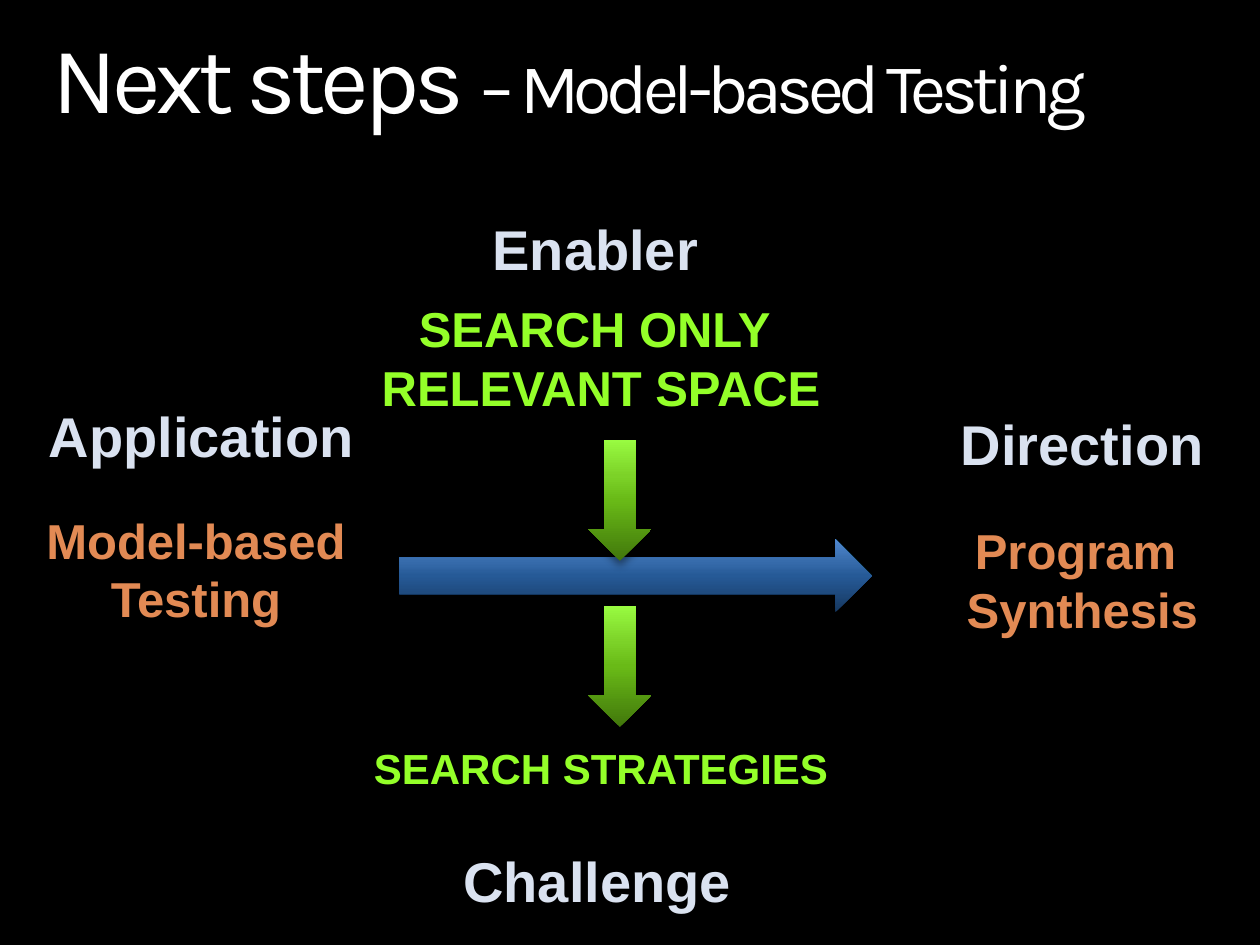
import lxml.etree
import pptx
import pptx.dml.color
import pptx.enum.shapes
import pptx.enum.text
import pptx.oxml.ns
import pptx.util

COLOURS = {
    "backdrop": "000000", "title": "FFFFFF", "heading": "DAE2F0",
    "search": "94FF29", "topic": "E28A54", "shadow": "000000",
}
GRADIENTS = {
    "blue": {0: "163860", 50: "265A97", 70: "376CAC", 100: "5188D0"},
    "green": {0: "41770B", 50: "69BA17", 70: "7CD228", 100: "99FB41"},
}
LABELS = [
    ("heading", 32, (3.8, 1.65, 1.85, 0.64), ["Enabler"]),
    ("search", 28, (2.91, 2.32, 3.72, 1.04), ["SEARCH ONLY ", "RELEVANT SPACE"]),
    ("heading", 32, (0.28, 3.14, 2.64, 0.64), ["Application"]),
    ("topic", 28, (0.25, 4, 2.61, 1.04), ["Model-based", "Testing"]),
    ("heading", 32, (7.52, 3.2, 2.14, 0.64), ["Direction"]),
    ("topic", 28, (7.56, 4.08, 2.06, 1.04), ["Program ", "Synthesis"]),
    ("search", 24, (2.85, 5.84, 3.84, 0.5), ["SEARCH STRATEGIES"]),
    ("heading", 32, (3.57, 6.67, 2.34, 0.64), ["Challenge"]),
]
ARROWS = [
    ("RIGHT_ARROW", "blue", (3.17, 4.28, 3.75, 0.58)),
    ("DOWN_ARROW", "green", (4.67, 3.49, 0.5, 0.96)),
    ("DOWN_ARROW", "green", (4.67, 4.81, 0.5, 0.96)),
]


def colour(name):
    """Return the named colour."""
    return pptx.dml.color.RGBColor.from_string(COLOURS[name])


def apply(target, values):
    """Set each attribute in a dict of format values."""
    for name, value in values.items():
        setattr(target, name, value)


def inches(box):
    """Turn a box in inches into lengths."""
    return [pptx.util.Inches(length) for length in box]


def add_child(parent, tag, **attributes):
    """Append a drawing element with the given attributes."""
    child = lxml.etree.SubElement(parent, pptx.oxml.ns.qn(tag))
    for name, value in attributes.items():
        child.set(name, str(value))
    return child


def fill_title(page, box):
    """Place the two-size title in the title placeholder."""
    title = page.shapes.title
    apply(title, dict(zip(("left", "top", "width", "height"), inches(box))))
    frame = title.text_frame
    apply(frame, {
        "margin_left": 0, "margin_top": 0, "margin_right": 0, "margin_bottom": 0,
        "word_wrap": True, "vertical_anchor": pptx.enum.text.MSO_ANCHOR.TOP,
        "auto_size": pptx.enum.text.MSO_AUTO_SIZE.SHAPE_TO_FIT_TEXT,
    })
    para = frame.paragraphs[0]
    apply(para, {"alignment": pptx.enum.text.PP_ALIGN.LEFT, "line_spacing": 0.9})
    for text, size in (("Next steps ", 54), ("– Model-based Testing", 40)):
        span = para.add_run()
        span.text = text
        apply(span.font, {"name": "Karla", "size": pptx.util.Pt(size)})
        span.font.color.rgb = colour("title")
        span.font._element.set("spc", "-300")


def add_arrow(page, preset, gradient, box):
    """Draw a block arrow with a gradient and a soft shadow."""
    kind = getattr(pptx.enum.shapes.MSO_SHAPE, preset)
    arrow = page.shapes.add_shape(kind, *inches(box))
    arrow.line.fill.background()
    arrow.fill.gradient()
    arrow.fill.gradient_angle = 90
    arrow.shadow.inherit = False
    properties = arrow._element.spPr
    stops = properties.find(".//" + pptx.oxml.ns.qn("a:gsLst"))
    for stop in list(stops):
        stops.remove(stop)
    for share, value in GRADIENTS[gradient].items():
        stop = add_child(stops, "a:gs", pos=share * 1000)
        add_child(stop, "a:srgbClr", val=value)
    effects = properties.find(pptx.oxml.ns.qn("a:effectLst"))
    shadow = add_child(
        effects, "a:outerShdw", blurRad=pptx.util.Pt(5), dist=pptx.util.Pt(3),
        dir=5400000, rotWithShape=0)
    tint = add_child(shadow, "a:srgbClr", val=COLOURS["shadow"])
    add_child(tint, "a:alpha", val=45000)


def add_label(page, role, size, box, lines):
    """Place a bold centred label, one paragraph a line."""
    frame = page.shapes.add_textbox(*inches(box)).text_frame
    apply(frame, {
        "word_wrap": False,
        "auto_size": pptx.enum.text.MSO_AUTO_SIZE.SHAPE_TO_FIT_TEXT,
    })
    frame.text = "\n".join(lines)
    for para in frame.paragraphs:
        para.alignment = pptx.enum.text.PP_ALIGN.CENTER
        font = para.runs[0].font
        apply(font, {"name": "Arial", "size": pptx.util.Pt(size), "bold": True})
        font.color.rgb = colour(role)


def main():
    """Build and save the slide."""
    deck = pptx.Presentation()
    apply(deck, {"slide_width": pptx.util.Inches(10),
                 "slide_height": pptx.util.Inches(7.5)})
    page = deck.slides.add_slide(deck.slide_layouts[5])
    page.background.fill.solid()
    page.background.fill.fore_color.rgb = colour("backdrop")
    fill_title(page, (0.42, 0.25, 9.17, 0.82))
    for arrow in ARROWS:
        add_arrow(page, *arrow)
    for label in LABELS:
        add_label(page, *label)
    deck.save("out.pptx")


if __name__ == "__main__":
    main()
